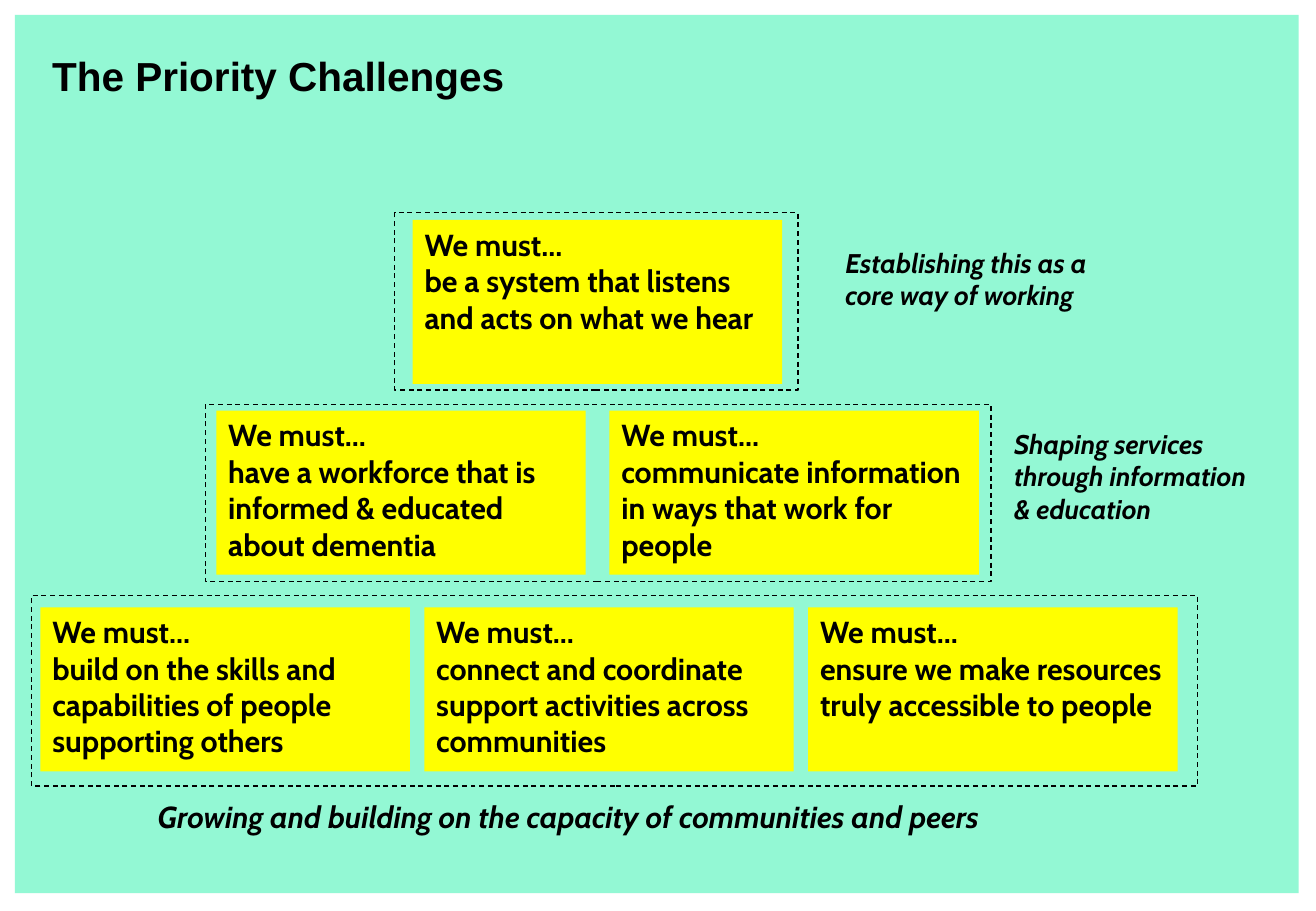
from lxml.etree import SubElement
from pptx import Presentation
from pptx.dml.color import RGBColor
from pptx.enum.dml import MSO_LINE_DASH_STYLE as Dash
from pptx.enum.shapes import MSO_SHAPE as Shape
from pptx.enum.text import MSO_ANCHOR as Anchor, PP_ALIGN as Align
from pptx.oxml.ns import qn
from pptx.util import Pt

MINT = RGBColor(0x63, 0xF6, 0xC1)
YELLOW = RGBColor(0xFF, 0xFF, 0x00)
BLACK = RGBColor(0x00, 0x00, 0x00)

CARD_WIDTH, CARD_HEIGHT = 219, 97.2

# Each tier: dashed frame, offset of its first card, card pitch, card texts,
# then the note beside or below it with its text size
TIERS = [
    ((234, 126, 239, 105.2), (10.6, 4.3), 0,
     ["be a system that listens and acts on what we hear"],
     (493.9, 142.6, 164.2, 65.5), 16,
     "Establishing this as a core way of working"),
    ((121.7, 239.7, 465.8, 105.2), (6.5, 3.7), 233,
     ["have a workforce that is informed & educated about dementia",
      "communicate information in ways that work for people"],
     (594, 249.8, 152.6, 85), 16,
     "Shaping services through information & education"),
    ((18.8, 353, 691.2, 113), (5.2, 7), 227.5,
     ["build on the skills and capabilities of people supporting others",
      "connect and coordinate support activities across communities",
      "ensure we make resources truly accessible to people"],
     (86.4, 469.4, 569.5, 28.8), 18,
     "Growing and building on the capacity of communities and peers"),
]


def set_text(shape, text, size, font="Cabin", italic=False, inset=3.6):
    frame = shape.text_frame
    frame.word_wrap = True
    frame.vertical_anchor = Anchor.TOP
    frame.margin_left = frame.margin_right = Pt(7.2)
    frame.margin_top = frame.margin_bottom = Pt(inset)
    frame.text = text
    para = frame.paragraphs[0]
    para.alignment = Align.LEFT
    para.font.name = font
    para.font.size = Pt(size)
    para.font.bold = True
    para.font.italic = italic
    para.font.color.rgb = BLACK


def add_rectangle(page, box, fill=None):
    shape = page.shapes.add_shape(Shape.RECTANGLE, *map(Pt, box))
    shape.shadow.inherit = False
    shape.line.fill.background()
    if fill is None:
        shape.fill.background()
    else:
        shape.fill.solid()
        shape.fill.fore_color.rgb = fill
    return shape


def add_text(page, box, text, size, **style):
    set_text(page.shapes.add_textbox(*map(Pt, box)), text, size, **style)


def add_backdrop(page, box):
    backdrop = add_rectangle(page, box, MINT)
    color = backdrop.fill._xPr.find(qn("a:solidFill"))[0]
    SubElement(color, qn("a:alpha"), val="69000")


def add_tier(page, box, offset, pitch, challenges):
    left, top = box[0] + offset[0], box[1] + offset[1]
    # Challenge cards
    for index, challenge in enumerate(challenges):
        card_box = (left + index * pitch, top, CARD_WIDTH, CARD_HEIGHT)
        card = add_rectangle(page, card_box, YELLOW)
        set_text(card, "We must...\v" + challenge, 18)
    # Dashed frame
    frame = add_rectangle(page, box)
    frame.line.color.rgb = BLACK
    frame.line.width = Pt(0.75)
    frame.line.dash_style = Dash.DASH


def main():
    deck = Presentation()
    deck.slide_width, deck.slide_height = Pt(780), Pt(540)
    page = deck.slides.add_slide(deck.slide_layouts[6])

    add_backdrop(page, (8.8, 8.8, 761, 520.6))
    add_text(page, (23.8, 23, 726.5, 60.5), "The Priority Challenges", 24,
             font="Arial", inset=7.2)
    for box, offset, pitch, challenges, note_box, size, note in TIERS:
        add_tier(page, box, offset, pitch, challenges)
        add_text(page, note_box, note, size, italic=True)

    deck.save("out.pptx")


if __name__ == "__main__":
    main()
